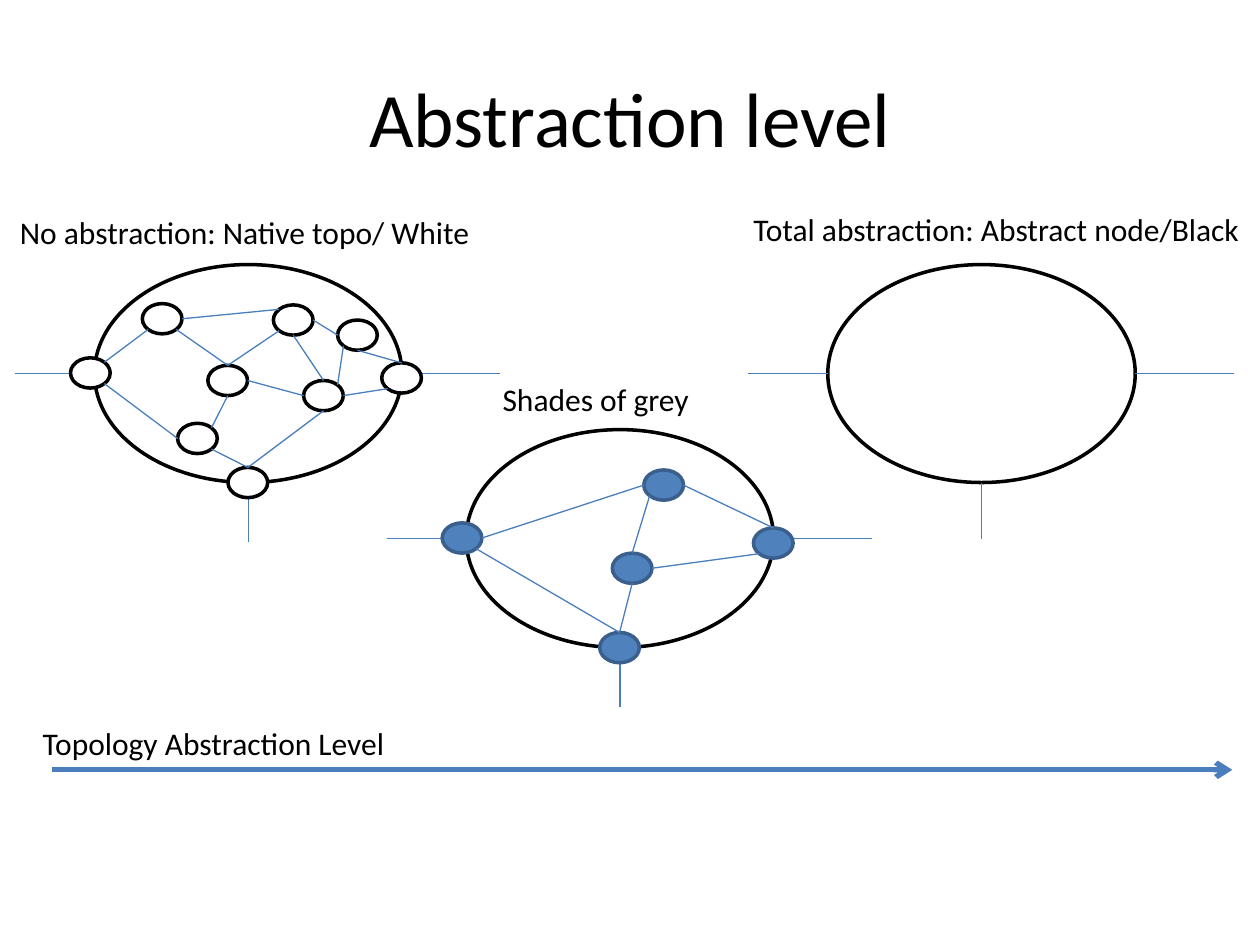
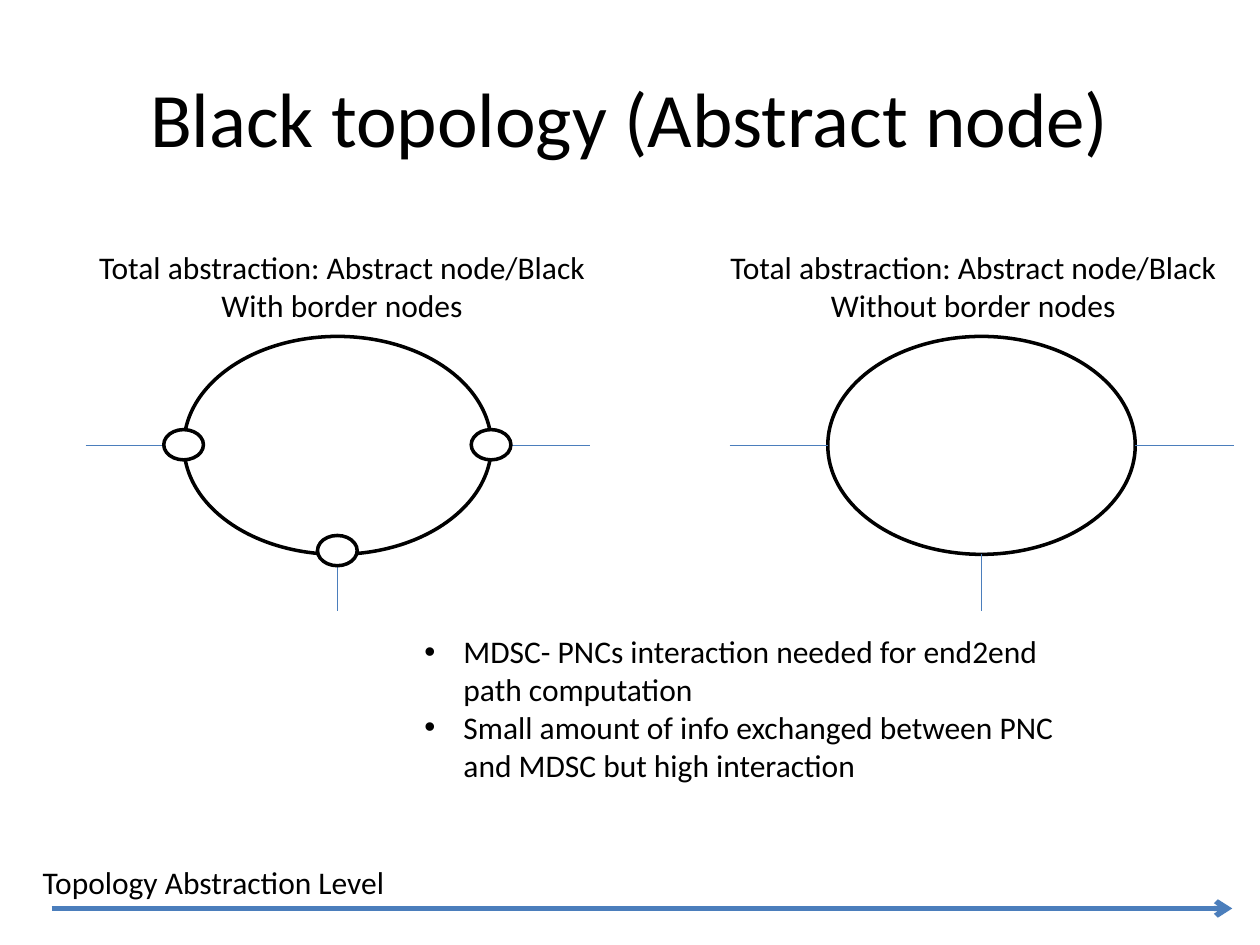
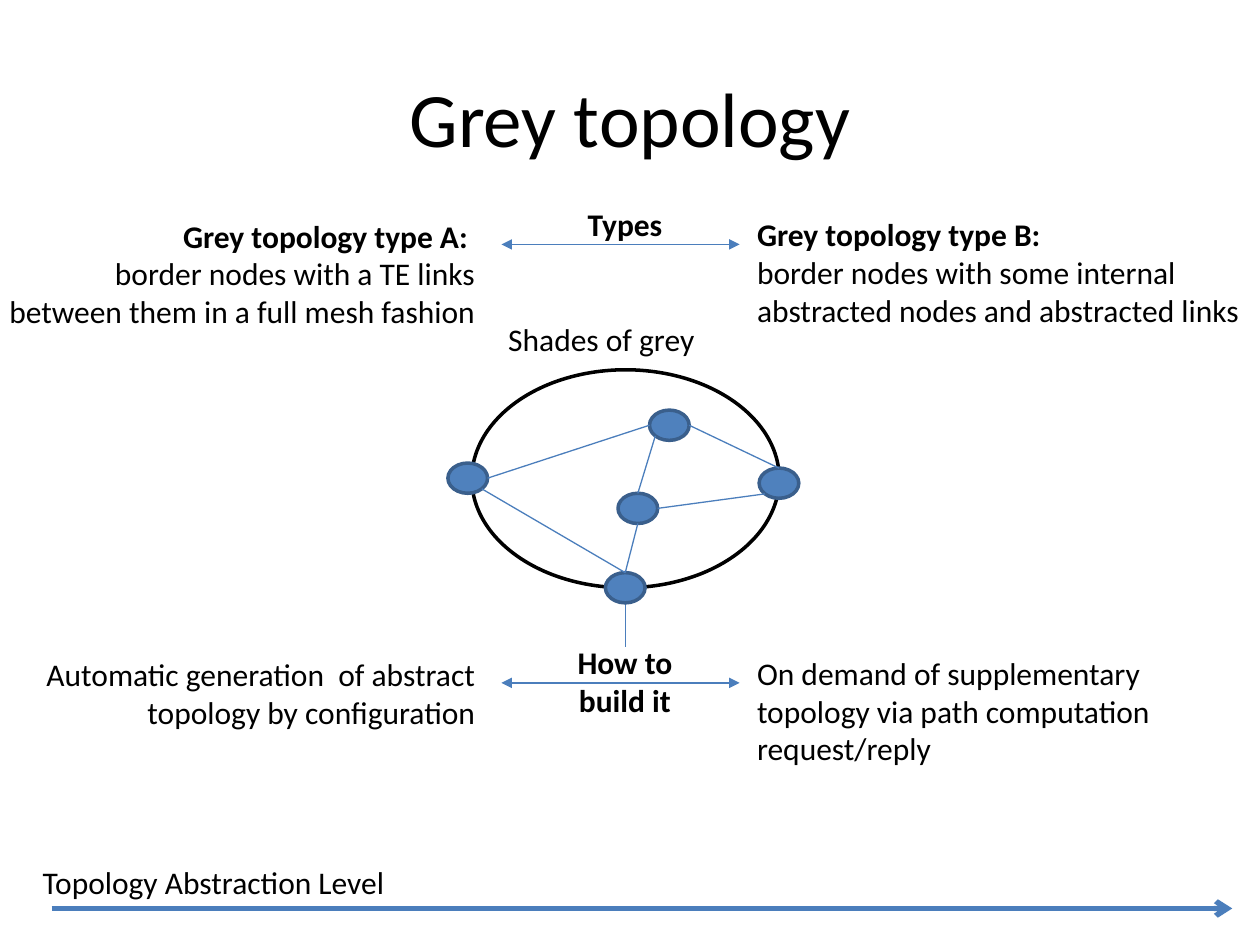
from math import cos, pi, sin

from pptx import Presentation
from pptx.dml.color import RGBColor
from pptx.enum.shapes import MSO_CONNECTOR, MSO_SHAPE
from pptx.enum.text import MSO_ANCHOR, MSO_AUTO_SIZE, PP_ALIGN
from pptx.oxml.ns import qn
from pptx.util import Inches, Pt
from lxml.etree import SubElement

COLORS = {"text": "000000", "outline": "000000", "white": "FFFFFF",
          "link": "4B7EBC", "grey_node": "4F81BD", "grey_edge": "3A5F8C"}
FONT = "Calibri"
COLUMNS, ROWS = 100, 75
WIDTH, HEIGHT = Inches(10), Inches(7.5)
DOMAIN_W, DOMAIN_H = 24.4, 17.3
NODE_W, NODE_H = 3.15, 2.4
BORDER = ("west", "south", "east")
LEFT, CENTER, RIGHT = PP_ALIGN.LEFT, PP_ALIGN.CENTER, PP_ALIGN.RIGHT

TOP, TOP_LEFT, SIDE_LEFT, LOW_LEFT, BOTTOM, LOW_RIGHT, SIDE_RIGHT, TOP_RIGHT = range(8)

WHITE_NODES = {
    "west": (-1.9, 7.4), "northwest": (3.8, 3.1), "southwest": (6.6, 12.6),
    "center": (9, 8), "north": (14.2, 3.2), "middle": (16.6, 9.2),
    "northeast": (19.3, 4.4), "south": (10.6, 16.1), "east": (22.8, 7.8),
}
WHITE_LINKS = [
    ("west", TOP_RIGHT, "northwest", LOW_LEFT),
    ("northwest", LOW_RIGHT, "center", TOP),
    ("center", BOTTOM, "southwest", TOP_RIGHT),
    ("west", LOW_RIGHT, "southwest", SIDE_LEFT),
    ("center", TOP, "north", LOW_LEFT),
    ("northwest", SIDE_RIGHT, "north", TOP_LEFT),
    ("north", BOTTOM, "middle", TOP),
    ("center", SIDE_RIGHT, "middle", SIDE_LEFT),
    ("south", TOP, "southwest", LOW_RIGHT),
    ("south", TOP, "middle", BOTTOM),
    ("middle", TOP_RIGHT, "northeast", LOW_LEFT),
    ("north", SIDE_RIGHT, "northeast", SIDE_LEFT),
    ("northeast", BOTTOM, "east", TOP),
    ("middle", SIDE_RIGHT, "east", LOW_LEFT),
]
GREY_NODES = {"west": (-1.9, 7.4), "north": (14.1, 3.2), "middle": (11.6, 9.8),
              "south": (10.6, 16.1), "east": (22.8, 7.8)}
GREY_LINKS = [
    ("west", SIDE_RIGHT, "north", SIDE_LEFT),
    ("middle", TOP, "north", LOW_LEFT),
    ("south", TOP, "west", LOW_RIGHT),
    ("south", TOP, "middle", BOTTOM),
    ("north", SIDE_RIGHT, "east", TOP),
    ("middle", SIDE_RIGHT, "east", LOW_LEFT),
]
BLACK_NODES = {"west": (-1.6, 7.4), "south": (10.6, 15.8), "east": (22.8, 7.4)}


def col(n):
    return round(WIDTH * n / COLUMNS)


def row(n):
    return round(HEIGHT * n / ROWS)


def rgb(name):
    return RGBColor.from_string(COLORS[name])


def add_text(slide, text, left, top, width, height, size=18, align=LEFT,
             bold_first=False, bullet=False, anchor=MSO_ANCHOR.TOP, grow=True):
    tf = slide.shapes.add_textbox(col(left), row(top), col(width), row(height)).text_frame
    tf.word_wrap = True
    tf.vertical_anchor = anchor
    tf.auto_size = MSO_AUTO_SIZE.SHAPE_TO_FIT_TEXT if grow else MSO_AUTO_SIZE.NONE
    for i, line in enumerate(text.split("\n")):
        p = tf.paragraphs[0] if i == 0 else tf.add_paragraph()
        p.alignment = align
        r = p.add_run()
        r.text = line
        r.font.name = FONT
        r.font.size = Pt(size)
        r.font.bold = bold_first and i == 0
        r.font.color.rgb = rgb("text")
        if bullet:
            pPr = p._p.get_or_add_pPr()
            pPr.set("marL", str(Inches(0.31)))
            pPr.set("indent", str(-Inches(0.31)))
            SubElement(pPr, qn("a:buFont")).set("typeface", "Arial")
            SubElement(pPr, qn("a:buChar")).set("char", "•")


def add_line(slide, start, end, weight=0.75, head=None, tail=None):
    sp = slide.shapes.add_connector(MSO_CONNECTOR.STRAIGHT, col(start[0]), row(start[1]),
                                    col(end[0]), row(end[1]))
    sp.line.color.rgb = rgb("link")
    sp.line.width = Pt(weight)
    ln = sp.line._get_or_add_ln()
    for tag, kind in (("a:headEnd", head), ("a:tailEnd", tail)):
        if kind:
            SubElement(ln, qn(tag)).set("type", kind)
    SubElement(sp._element.spPr, qn("a:effectLst"))


def add_ellipse(slide, left, top, width, height, fill=None, edge="outline"):
    sp = slide.shapes.add_shape(MSO_SHAPE.OVAL, col(left), row(top), col(width), row(height))
    sp.shadow.inherit = False
    if fill:
        sp.fill.solid()
        sp.fill.fore_color.rgb = rgb(fill)
    else:
        sp.fill.background()
    sp.line.color.rgb = rgb(edge)
    sp.line.width = Pt(2)


def add_domain(slide, left, top, west=0, east=0, south=0):
    add_ellipse(slide, left, top, DOMAIN_W, DOMAIN_H)
    right, bottom = left + DOMAIN_W, top + DOMAIN_H
    middle, center = top + DOMAIN_H / 2, left + DOMAIN_W / 2
    if west:
        add_line(slide, (left - west, middle), (left, middle))
    if east:
        add_line(slide, (right, middle), (right + east, middle))
    add_line(slide, (center, bottom), (center, bottom + south))


def site_point(corner, site):
    angle = pi / 2 + site * pi / 4
    return (corner[0] + NODE_W / 2 * (1 + cos(angle)),
            corner[1] + NODE_H / 2 * (1 - sin(angle)))


def add_network(slide, left, top, nodes, links=(), grey=False):
    corners = {name: (left + dx, top + dy) for name, (dx, dy) in nodes.items()}
    for name, corner in corners.items():
        fill = "grey_node" if grey else "white" if name in BORDER else None
        add_ellipse(slide, *corner, NODE_W, NODE_H, fill, "grey_edge" if grey else "outline")
    for begin, begin_site, end, end_site in links:
        add_line(slide, site_point(corners[begin], begin_site),
                 site_point(corners[end], end_site))


def add_grey_topology(slide, left, top, **stubs):
    add_domain(slide, left, top, **stubs)
    add_network(slide, left, top, GREY_NODES, GREY_LINKS, grey=True)
    add_text(slide, "Shades of grey", left + 1.9, top - 4.45, 20.5, 4)


def add_comparison(slide, label, y, height):
    add_line(slide, (39.8, y), (58.7, y), head="triangle", tail="triangle")
    add_text(slide, label, 43.9, y - 3.65, 11.4, height, align=CENTER, bold_first=True)


def start_slide(prs, title, level_y=72.1):
    slide = prs.slides.add_slide(prs.slide_layouts[6])
    add_text(slide, title, 5, 3, 90, 12.5, size=44, align=CENTER,
             anchor=MSO_ANCHOR.MIDDLE, grow=False)
    add_line(slide, (4.1, level_y), (97.8, level_y), weight=3, tail="arrow")
    add_text(slide, "Topology Abstraction Level", 2.4, level_y - 4.1, 35.8, 4)
    return slide


def build_levels(prs):
    slide = start_slide(prs, "Abstraction level", level_y=61.1)
    add_domain(slide, 65.7, 21, west=6.3, east=7.8, south=4.5)
    add_domain(slide, 7.5, 21, west=6.3, east=7.8, south=4.7)
    add_text(slide, "No abstraction: Native topo/ White", 0.6, 16.4, 39.4, 4)
    add_text(slide, "Total abstraction: Abstract node/Black", 58.8, 16.2, 40.9, 4)
    add_network(slide, 7.5, 21, WHITE_NODES, WHITE_LINKS)
    add_grey_topology(slide, 37, 34.1, west=6.3, east=7.8, south=4.7)


def build_black(prs):
    slide = start_slide(prs, "Black topology (Abstract node)")
    for left, label_left, border in ((14.6, 6.7, "With"), (65.7, 56.8, "Without")):
        add_domain(slide, left, 26.7, west=7.8, east=7.8, south=4.5)
        add_text(slide, f"Total abstraction: Abstract node/Black\n{border} border nodes",
                 label_left, 19.2, 40.9, 7.1, align=CENTER)
    add_network(slide, 14.6, 26.7, BLACK_NODES)
    add_text(slide, "MDSC- PNCs interaction needed for end2end path computation\n"
             "Small amount of info exchanged between PNC and MDSC but high interaction",
             32.7, 49.7, 55.2, 13.1, bullet=True)


def build_grey(prs):
    slide = start_slide(prs, "Grey topology")
    add_text(slide, " Grey topology type A: \nborder nodes with a TE links between them "
             "in a full mesh fashion ", -0.7, 16.7, 39.4, 10.1, align=RIGHT, bold_first=True)
    add_text(slide, "Grey topology type B:\nborder nodes with some internal abstracted "
             "nodes and abstracted links", 59.1, 16.6, 40.9, 10.1, bold_first=True)
    add_grey_topology(slide, 37.45, 29.35, south=4.7)
    add_comparison(slide, "Types", 19.4, 4)
    add_text(slide, " Automatic generation  of abstract topology by configuration",
             -0.7, 51.5, 39.4, 7.1, align=RIGHT)
    add_text(slide, "On demand of supplementary topology via path computation request/reply",
             59.1, 51.4, 40.9, 10.1)
    add_comparison(slide, "How to build it", 54.2, 7.1)


def main():
    prs = Presentation()
    prs.slide_width, prs.slide_height = WIDTH, HEIGHT
    build_levels(prs)
    build_black(prs)
    build_grey(prs)
    prs.save("out.pptx")


if __name__ == "__main__":
    main()
